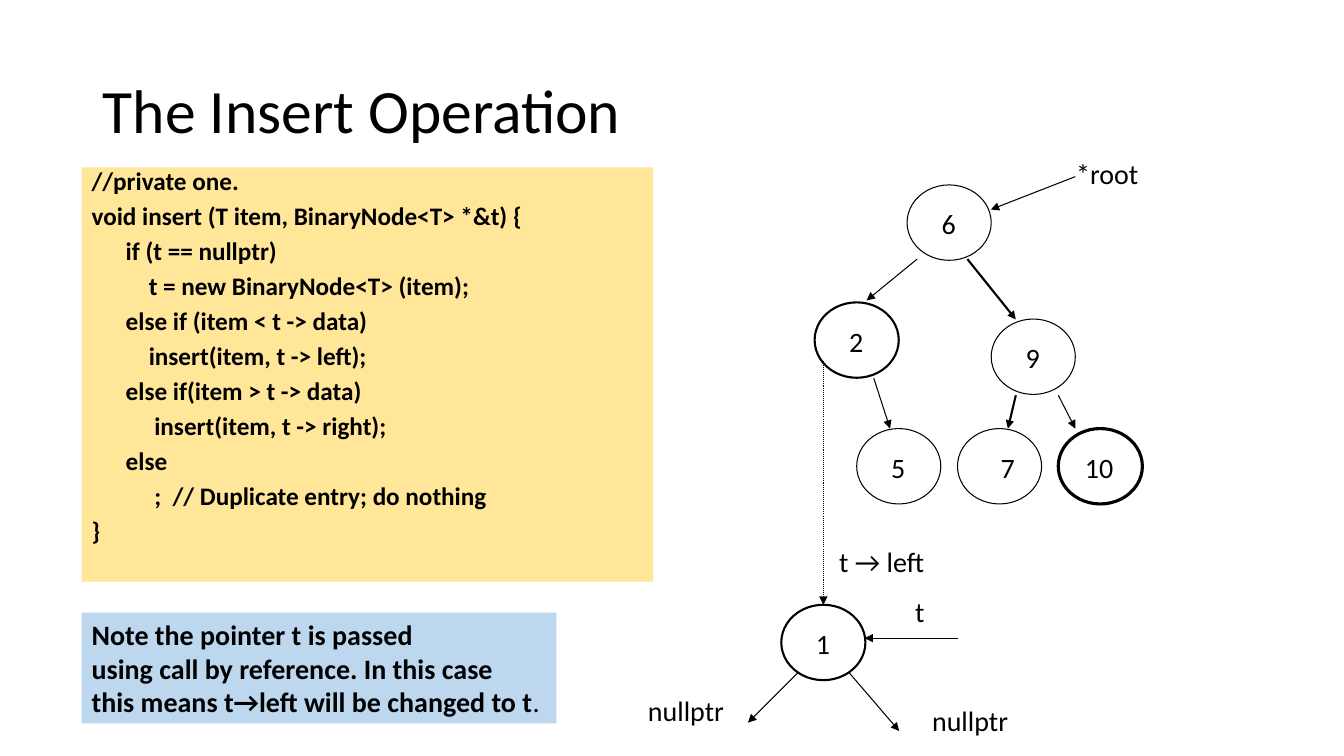
from pptx import Presentation
from pptx.dml.color import RGBColor
from pptx.enum.dml import MSO_LINE
from pptx.enum.shapes import MSO_CONNECTOR, MSO_SHAPE
from pptx.enum.text import MSO_ANCHOR, PP_ALIGN
from pptx.oxml.ns import qn
from pptx.util import Cm, Pt
from lxml import etree

STRAIGHT = MSO_CONNECTOR.STRAIGHT
OVAL, RECT = MSO_SHAPE.OVAL, MSO_SHAPE.RECTANGLE
TOP, MIDDLE, LEFT = MSO_ANCHOR.TOP, MSO_ANCHOR.MIDDLE, PP_ALIGN.LEFT
DOTTED = MSO_LINE.ROUND_DOT

BLACK, YELLOW, BLUE = "000000", "FFE699", "BDD7EE"
FONT = "Calibri"

# All positions and sizes are in centimetres.
TITLE = "The Insert Operation"
TITLE_BOX = (2.34, 1.02, 29.21, 3.68)
CODE_BOX = (2.06, 4.22, 14.4, 10.44)
NOTE_BOX = (2.06, 15.44, 11.96, 2.79)

BRANCH, ACTION, DEEP_ACTION = 0.86, 1.44, 1.58
CODE = [  # indent, line
    (0, "//private one."),
    (0, "void insert (T item, BinaryNode<T> *&t) {"),
    (BRANCH, "if (t == nullptr)"),
    (ACTION, "t = new BinaryNode<T> (item);"),
    (BRANCH, "else if (item < t -> data)"),
    (ACTION, "insert(item, t -> left);"),
    (BRANCH, "else if(item > t -> data)"),
    (DEEP_ACTION, "insert(item, t -> right);"),
    (BRANCH, "else"),
    (DEEP_ACTION, ";  // Duplicate entry; do nothing"),
    (0, "}"),
]
NOTE = [
    "Note the pointer t is passed",
    "using call by reference. In this case",
    "this means t→left will be changed to t",
]

NODE_W, NODE_H = 2.12, 1.9
LABEL_H, LABEL_DY = 1.12, 0.42
NODES = [  # key, left, top, outline, label offset, label width
    ("6", 22.86, 4.66, 0.75, 0.62, 0.86),
    ("2", 20.53, 7.62, 1.5, 0.62, 0.86),
    ("9", 24.98, 8.04, 0.75, 0.62, 0.86),
    ("5", 21.59, 10.8, 0.75, 0.62, 0.86),
    ("7", 24.13, 10.8, 0.75, 0.84, 0.86),
    ("10", 26.67, 10.8, 2.25, 0.42, 1.24),
    ("1", 19.69, 15.24, 1.5, 0.62, 0.86),
]
ARROWS = [  # from x, from y, to x, to y, width, dash
    (23.11, 6.53, 21.84, 7.57, 0.75, None),
    (24.38, 6.53, 25.6, 8.05, 1.5, None),
    (27.1, 4.45, 24.97, 5.28, 0.75, None),
    (22.02, 9.53, 22.43, 10.8, 0.75, None),
    (25.6, 9.96, 25.4, 10.8, 1.5, None),
    (26.67, 9.96, 27.1, 10.8, 0.75, None),
    (20.75, 9.09, 20.75, 15.24, 0.75, DOTTED),
    (20.12, 16.94, 18.85, 18.21, 0.75, None),
    (21.39, 16.94, 22.66, 18.42, 0.75, None),
    (24.13, 16.08, 21.79, 16.08, 0.75, None),
]
POINTER_LABELS = [  # text, left, top, width
    ("*root", 26.87, 3.81, 2.11),
    ("t → left", 20.9, 13.59, 2.74),
    ("t", 22.81, 14.86, 0.76),
    ("nullptr", 16.08, 17.35, 2.46),
    ("nullptr", 23.24, 17.6, 2.46),
]


def color(hex_string):
    return RGBColor.from_string(hex_string)


def cm(values):
    return [Cm(v) for v in values]


def add_run(p, text, size, bold=False):
    r = p.add_run()
    r.text = text
    for name, value in {"name": FONT, "size": Pt(size), "bold": bold}.items():
        setattr(r.font, name, value)
    r.font.color.rgb = color(BLACK)


def add_paragraph(tf, index, text, size, bold=False, **formats):
    """Append a left-aligned paragraph, using the frame's first one at index 0."""
    p = tf.add_paragraph() if index else tf.paragraphs[0]
    for name, value in {"alignment": LEFT, **formats}.items():
        setattr(p, name, value)
    add_run(p, text, size, bold)
    return p


def add_panel(s, box, fill, wrap):
    sp = s.shapes.add_shape(RECT, *cm(box))
    sp.shadow.inherit = False
    sp.fill.solid()
    sp.fill.fore_color.rgb = color(fill)
    sp.line.fill.background()
    tf = sp.text_frame
    tf.word_wrap, tf.vertical_anchor = wrap, TOP
    return tf


def add_label(s, text, left, top, width):
    tf = s.shapes.add_textbox(*cm((left, top, width, LABEL_H))).text_frame
    tf.word_wrap = False
    add_paragraph(tf, 0, text, 20)


def add_node(s, key, left, top, outline, label_dx, label_w):
    sp = s.shapes.add_shape(OVAL, *cm((left, top, NODE_W, NODE_H)))
    sp.shadow.inherit = False
    sp.fill.background()
    sp.line.color.rgb = color(BLACK)
    sp.line.width = Pt(outline)
    add_label(s, key, left + label_dx, top + LABEL_DY, label_w)


def add_arrow(s, x1, y1, x2, y2, width, dash):
    c = s.shapes.add_connector(STRAIGHT, *cm((x1, y1, x2, y2)))
    c.line.color.rgb = color(BLACK)
    c.line.width = Pt(width)
    if dash:
        c.line.dash_style = dash
    ln = c.line._get_or_add_ln()
    etree.SubElement(ln, qn("a:tailEnd")).set("type", "triangle")
    etree.SubElement(c._element.spPr, qn("a:effectLst"))


def main():
    prs = Presentation()
    prs.slide_width, prs.slide_height = cm((33.87, 19.05))
    s = prs.slides.add_slide(prs.slide_layouts[5])

    title = s.shapes.title
    title.left, title.top, title.width, title.height = cm(TITLE_BOX)
    title.text_frame.vertical_anchor = MIDDLE
    add_paragraph(title.text_frame, 0, TITLE, 44, line_spacing=0.9)

    tf = add_panel(s, CODE_BOX, YELLOW, True)
    for i, (indent, line) in enumerate(CODE):
        p = add_paragraph(tf, i, line, 18, True, line_spacing=0.75,
                          space_before=Pt(8.75 if i else 0))
        p._p.get_or_add_pPr().set("marL", str(Cm(indent)))

    for arrow in ARROWS:
        add_arrow(s, *arrow)
    for node in NODES:
        add_node(s, *node)
    for label in POINTER_LABELS:
        add_label(s, *label)

    tf = add_panel(s, NOTE_BOX, BLUE, False)
    for i, line in enumerate(NOTE):
        p = add_paragraph(tf, i, line, 20, True)
    add_run(p, ".", 20)

    prs.save("out.pptx")


if __name__ == "__main__":
    main()
